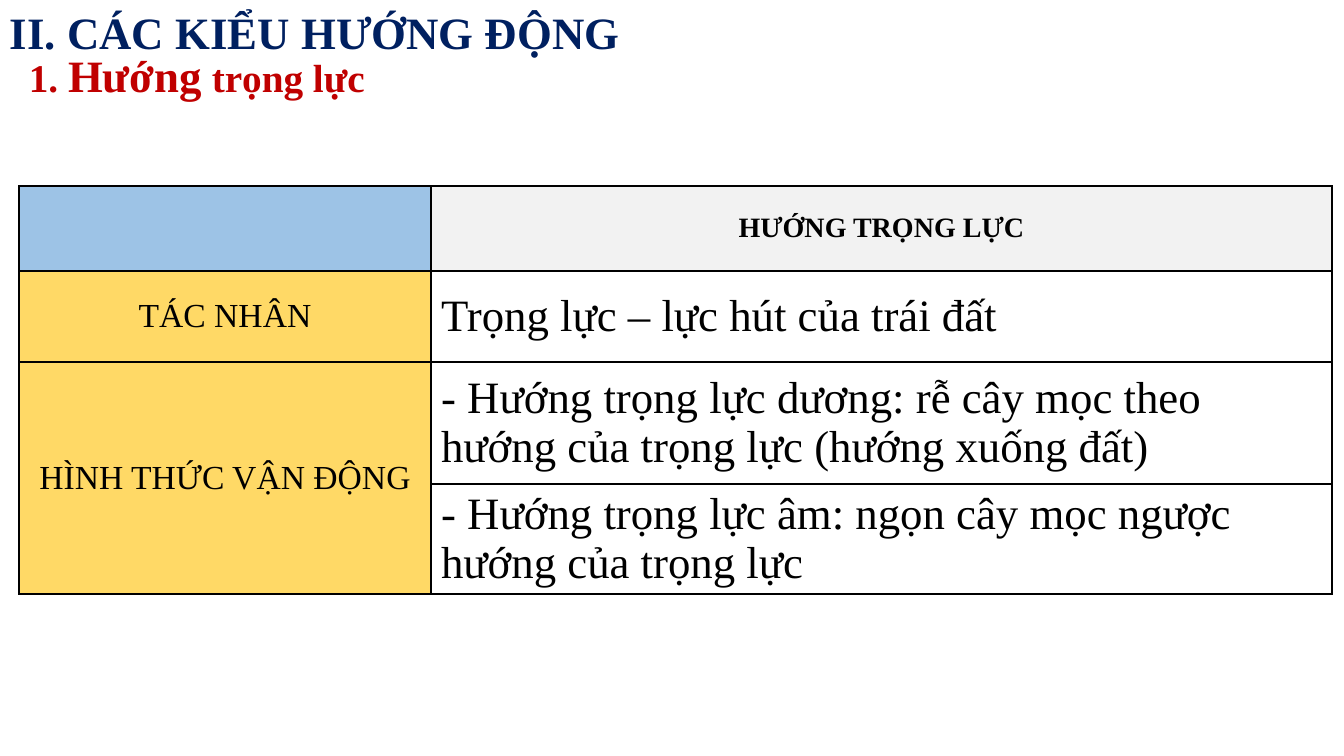
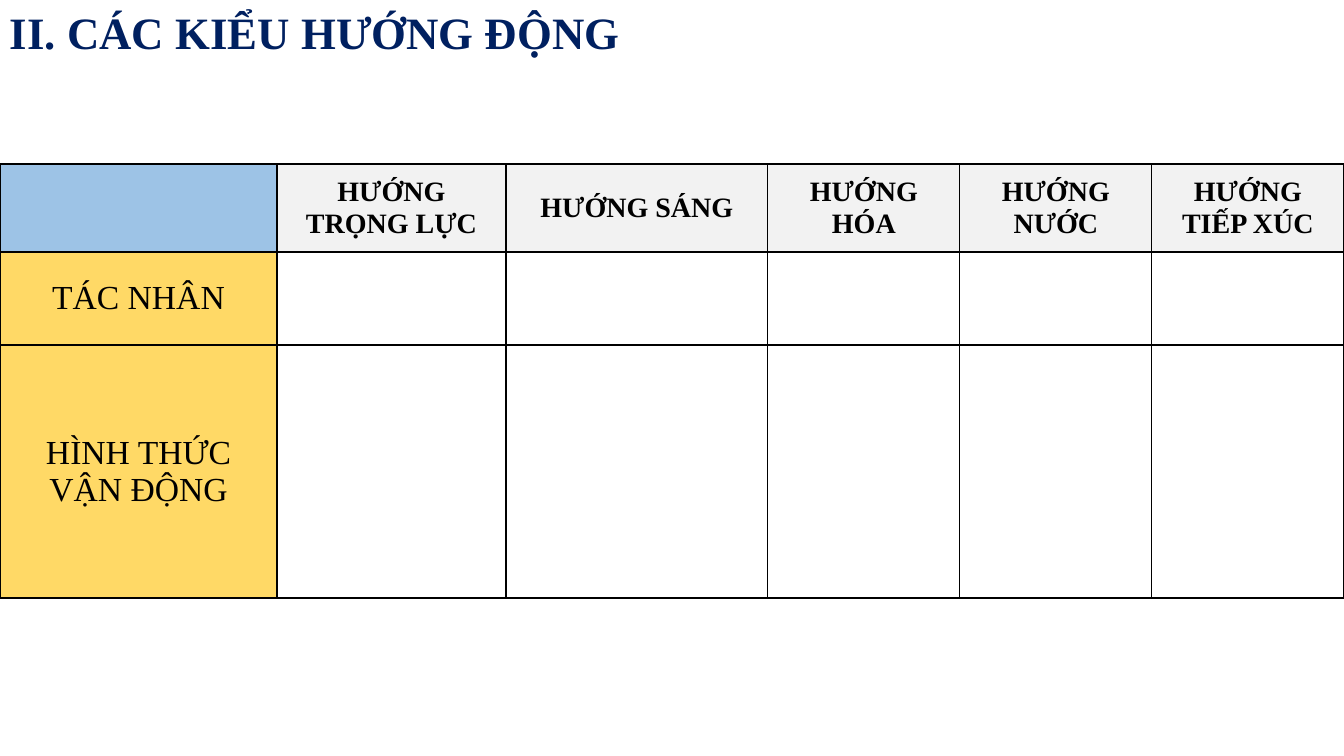
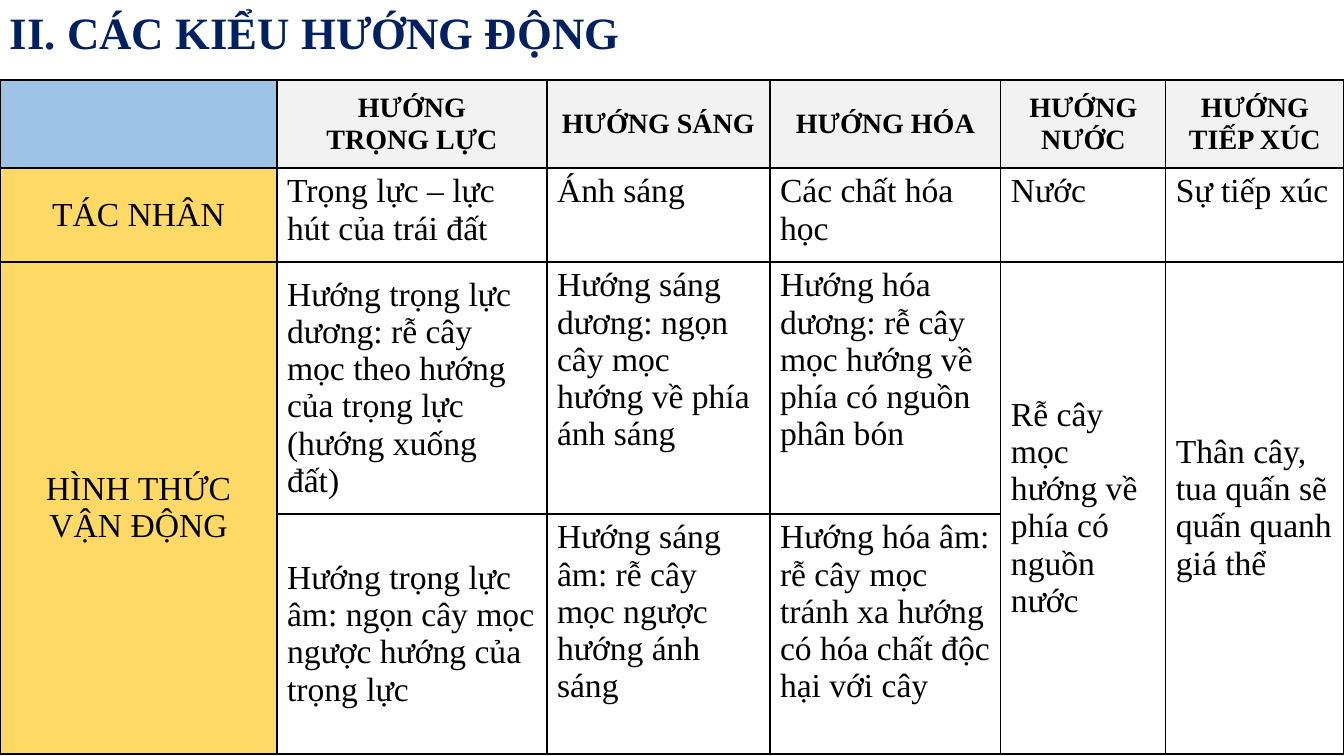
from lxml import etree
from pptx import Presentation
from pptx.dml.color import RGBColor
from pptx.enum.text import MSO_ANCHOR, PP_ALIGN
from pptx.oxml.ns import qn
from pptx.util import Pt

MIDDLE, TOP = MSO_ANCHOR.MIDDLE, MSO_ANCHOR.TOP
CENTER, LEFT = PP_ALIGN.CENTER, PP_ALIGN.LEFT

PX = 914400 / 100.8
FONT = "Times New Roman"
NAVY = RGBColor(0x00, 0x20, 0x60)
RED = RGBColor(0xC0, 0x00, 0x00)
BLACK = RGBColor(0x00, 0x00, 0x00)
BLUE = RGBColor(0x9D, 0xC3, 0xE6)
GREY = RGBColor(0xF2, 0xF2, 0xF2)
YELLOW = RGBColor(0xFF, 0xD9, 0x66)

# Content
TITLE = [("II. CÁC KIỂU HƯỚNG ĐỘNG", 32)]
SUBTITLE = [("1. ", 28), ("Hướng", 32), (" trọng lực", 28)]
AGENT, FORM = "TÁC NHÂN", "HÌNH THỨC VẬN ĐỘNG"
GRAVITY = "Trọng lực – lực hút của trái đất"
KINDS = ["", "HƯỚNG\vTRỌNG LỰC", "HƯỚNG SÁNG", "HƯỚNG HÓA",
         "HƯỚNG NƯỚC", "HƯỚNG TIẾP XÚC"]

# "merged" lists the columns whose last two rows are one cell;
# "top" holds the (row, column) places whose text sits at the top.
TABLES = [
    {
        "subtitle": SUBTITLE, "at": (19, 186), "size": 32,
        "columns": [412, 901], "heights": [85, 91, 122, 110],
        "merged": [0], "top": set(),
        "rows": [
            ["", "HƯỚNG TRỌNG LỰC"],
            [AGENT, GRAVITY],
            [FORM, "- Hướng trọng lực dương: rễ cây mọc theo hướng của "
                   "trọng lực (hướng xuống đất)"],
            ["", "- Hướng trọng lực âm: ngọn cây mọc ngược hướng của "
                 "trọng lực"],
        ],
    },
    {
        "at": (0, 164), "size": 24,
        "columns": [277, 229, 262, 192, 192, 192], "heights": [88, 93, 253],
        "merged": [], "top": set(),
        "rows": [KINDS, [AGENT] + [""] * 5, [FORM] + [""] * 5],
    },
    {
        "at": (0, 80), "size": 24,
        "columns": [277, 270, 223, 231, 165, 178],
        "heights": [88, 94, 236, 240],
        "merged": [0, 4, 5],
        "top": {(1, column) for column in range(1, 6)}
               | {(row, column) for row in (2, 3) for column in (2, 3)},
        "rows": [
            KINDS,
            [AGENT, GRAVITY, "Ánh sáng", "Các chất hóa học", "Nước",
             "Sự tiếp xúc"],
            [FORM,
             "Hướng trọng lực dương: rễ cây mọc theo hướng của trọng lực "
             "(hướng xuống đất)",
             "Hướng sáng dương: ngọn cây mọc hướng về phía ánh sáng",
             "Hướng hóa dương: rễ cây mọc hướng về phía có nguồn phân bón",
             "Rễ cây mọc hướng về phía có nguồn nước",
             "Thân cây, tua quấn sẽ quấn quanh giá thể"],
            ["",
             "Hướng trọng lực âm: ngọn cây mọc ngược hướng của trọng lực",
             "Hướng sáng âm: rễ cây mọc ngược hướng ánh sáng",
             "Hướng hóa âm: rễ cây mọc tránh xa hướng có hóa chất độc hại "
             "với cây",
             "", ""],
        ],
    },
]


def px(value):
    return round(value * PX)


def set_font(font, size, color, bold):
    font.name, font.size, font.bold = FONT, Pt(size), bold
    font.color.rgb = color


def add_heading(page, left, top, width, height, spans, color, wrap=True):
    box = page.shapes.add_textbox(px(left), px(top), px(width), px(height))
    box.text_frame.word_wrap = wrap
    para = box.text_frame.paragraphs[0]
    set_font(para.font, spans[0][1], color, True)
    for text, size in spans:
        span = para.add_run()
        span.text = text
        set_font(span.font, size, color, True)


def add_borders(cell):
    properties = cell._tc.get_or_add_tcPr()
    for index, side in enumerate(("lnL", "lnR", "lnT", "lnB")):
        line = etree.Element(qn("a:" + side), w=str(Pt(1)))
        fill = etree.SubElement(line, qn("a:solidFill"))
        etree.SubElement(fill, qn("a:srgbClr"), val=str(BLACK))
        properties.insert(index, line)


def cell_style(row, column, body_size):
    """Return fill, text size, bold and alignment by place in the table."""
    if row == 0:
        return (GREY if column else BLUE), 20, True, CENTER
    if column == 0:
        return YELLOW, 24, False, CENTER
    return None, body_size, False, LEFT


def add_grid(page, data):
    columns, heights, rows = data["columns"], data["heights"], data["rows"]
    left, top = data["at"]
    table = page.shapes.add_table(
        len(rows), len(columns), px(left), px(top),
        px(sum(columns)), px(sum(heights))).table
    table.first_row = table.horz_banding = False
    for column, width in zip(table.columns, columns):
        column.width = px(width)
    for row, height in zip(table.rows, heights):
        row.height = px(height)

    for r, texts in enumerate(rows):
        for c, text in enumerate(texts):
            fill, size, bold, align = cell_style(r, c, data["size"])
            cell = table.cell(r, c)
            if fill is None:
                cell.fill.background()
            else:
                cell.fill.solid()
                cell.fill.fore_color.rgb = fill
            add_borders(cell)
            cell.vertical_anchor = TOP if (r, c) in data["top"] else MIDDLE
            cell.text = text
            para = cell.text_frame.paragraphs[0]
            para.alignment = align
            set_font(para.font, size, BLACK, bold)

    last = len(rows) - 1
    for c in data["merged"]:
        table.cell(last - 1, c).merge(table.cell(last, c))


def main():
    deck = Presentation()
    deck.slide_width, deck.slide_height = px(1344), px(756)
    for data in TABLES:
        page = deck.slides.add_slide(deck.slide_layouts[6])
        add_grid(page, data)
        add_heading(page, 0, 0, 775, 64, TITLE, NAVY)
        if "subtitle" in data:
            add_heading(page, 19, 43, 360, 64, data["subtitle"], RED, False)
    deck.save("out.pptx")


if __name__ == "__main__":
    main()
